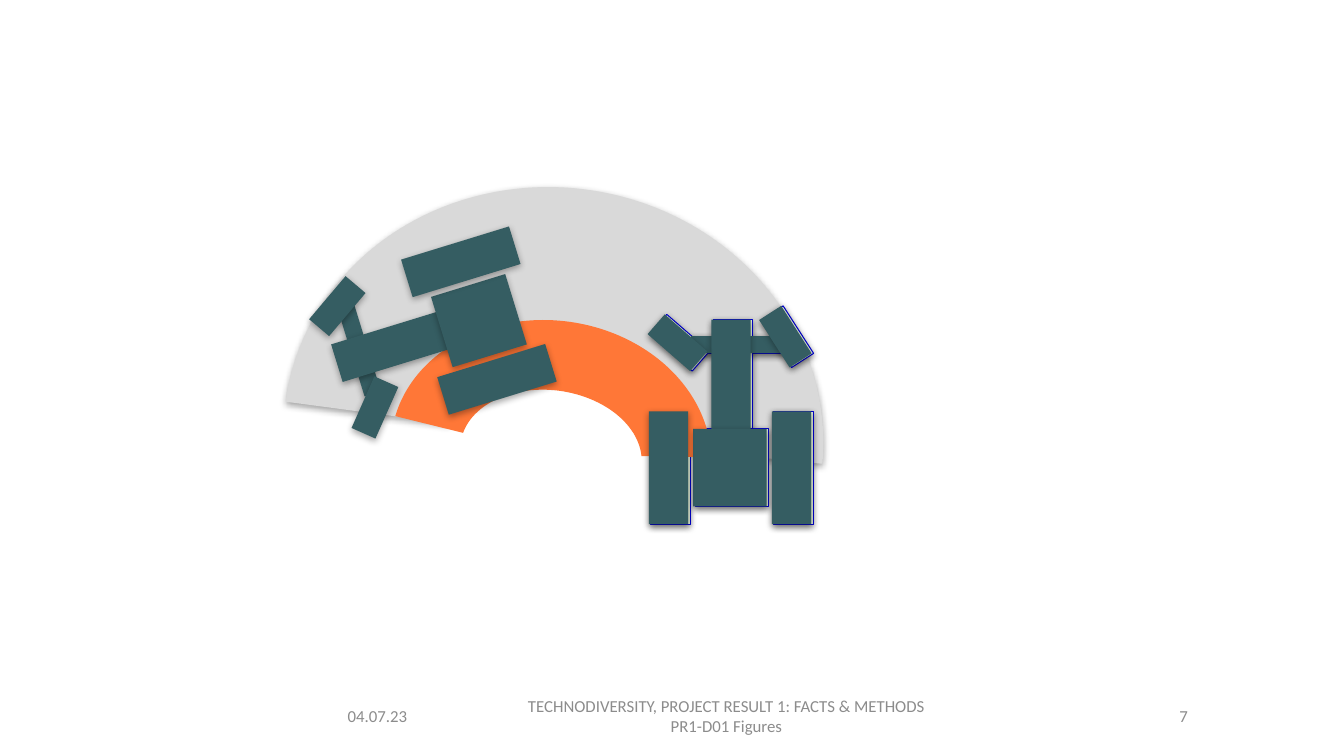
from math import cos, radians, sin

from lxml import etree
from pptx import Presentation
from pptx.dml.color import RGBColor
from pptx.enum.shapes import MSO_SHAPE
from pptx.enum.text import MSO_ANCHOR, PP_ALIGN
from pptx.oxml.ns import qn
from pptx.util import Inches, Pt

RECT, ARC = MSO_SHAPE.RECTANGLE, MSO_SHAPE.BLOCK_ARC
MIDDLE = MSO_ANCHOR.MIDDLE
LEFT, CENTER, RIGHT = PP_ALIGN.LEFT, PP_ALIGN.CENTER, PP_ALIGN.RIGHT

GREY, ORANGE, TEAL = "D9D9D9", "FF7737", "355D62"
PALE, BLUE, MUTED = "E2F0D9", "0000CC", "8C8C8C"

# Tractor parts: centre relative to the body's centre, width, height, turn
PARTS = [
    (0.07, -1.22, 0.91, 0.17, 0),       # front axle
    (0.01, -0.91, 0.39, 1.12, 0),       # hood
    (0, 0, 0.73, 0.77, 0),              # body
    (0.61, 0, 0.39, 1.12, 0),           # rear wheels
    (-0.61, 0, 0.39, 1.12, 0),
    (0.55, -1.3, 0.26, 0.56, 327.3),    # front wheels
    (-0.52, -1.24, 0.26, 0.56, 311),
]


def color(code):
    return RGBColor.from_string(code)


def add_shadow(shape):
    effects = shape._element.spPr.find(qn("a:effectLst"))
    outer = etree.SubElement(
        effects, qn("a:outerShdw"), blurRad=str(Pt(5)), dist=str(Pt(1.8)),
        dir="5400000", rotWithShape="0")
    tone = etree.SubElement(outer, qn("a:srgbClr"), val="000000")
    etree.SubElement(tone, qn("a:alpha"), val="35000")


def add_form(shapes, kind, box, turn, fill, line=None, shade=True):
    shape = shapes.add_shape(kind, *map(Inches, box))
    shape.rotation = turn
    shape.fill.solid()
    shape.fill.fore_color.rgb = color(fill)
    if line:
        shape.line.color.rgb = color(line)
        shape.line.width = Pt(0.75)
    else:
        shape.line.fill.background()
    shape.shadow.inherit = False
    if shade:
        add_shadow(shape)
    return shape


def add_track(shapes, box, turn, start, end, depth, fill, shade):
    """Block arc from start to end, in degrees; depth is a share of the shorter side."""
    arc = add_form(shapes, ARC, box, turn, fill, shade=shade)
    # Adjustments count 100000 per unit, angles 60000 per degree
    for index, value in enumerate((start * 0.6, end * 0.6, depth)):
        arc.adjustments[index] = value


def add_tractor(shapes, x, y, turn, fill, line=None):
    """Group of parts turned about the body's centre at x, y."""
    group = shapes.add_group_shape()
    c, s = cos(radians(turn)), sin(radians(turn))
    for dx, dy, w, h, tilt in PARTS:
        left = x + dx * c - dy * s - w / 2
        top = y + dx * s + dy * c - h / 2
        add_form(group.shapes, RECT, (left, top, w, h),
                 (turn + tilt) % 360, fill, line)


def add_label(shapes, left, width, text, align):
    box = shapes.add_textbox(Inches(left), Inches(6.9), Inches(width), Inches(0.4))
    frame = box.text_frame
    frame.word_wrap = True
    frame.vertical_anchor = MIDDLE
    frame.text = text
    for para in frame.paragraphs:
        para.alignment = align
        for run in para.runs:
            run.font.name = "Calibri"
            run.font.size = Pt(12)
            run.font.color.rgb = color(MUTED)


def main():
    deck = Presentation()
    deck.slide_width, deck.slide_height = Inches(13.33), Inches(7.5)
    shapes = deck.slides.add_slide(deck.slide_layouts[6]).shapes

    add_label(shapes, 3.35, 1.34, "04.07.23", LEFT)
    add_label(shapes, 4.86, 4.69,
              "TECHNODIVERSITY, PROJECT RESULT 1: FACTS & METHODS\nPR1-D01 Figures",
              CENTER)
    add_label(shapes, 9.77, 2.11, "7", RIGHT)

    add_track(shapes, (2.81, 1.86, 5.36, 4.96), 7.6, 180, 358, 0.33, GREY, True)
    add_tractor(shapes, 7.26, 4.64, 0, PALE, BLUE)
    add_track(shapes, (3.87, 3.18, 3.19, 2.66), 7.7, 186.19, 353.26, 0.26, ORANGE, False)
    add_tractor(shapes, 4.75, 3.18, 252.9, TEAL)
    add_tractor(shapes, 7.24, 4.64, 0, TEAL)

    deck.save("out.pptx")


if __name__ == "__main__":
    main()
